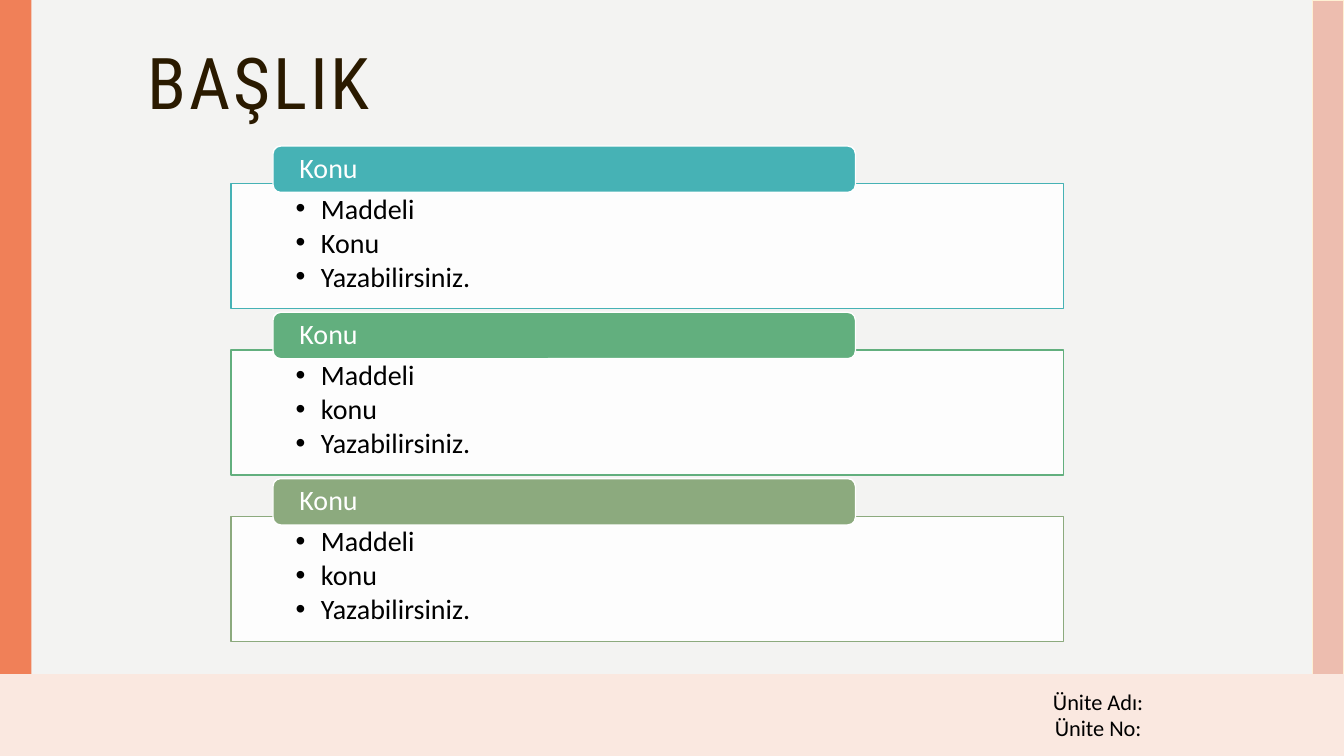
"""Build a title slide with three topic panels and a unit footer."""
import pptx
import pptx.util
import pptx.dml.color
import pptx.enum.shapes
import pptx.enum.text
import pptx.oxml
import pptx.oxml.ns

Cm, Pt = pptx.util.Cm, pptx.util.Pt
SHAPE = pptx.enum.shapes.MSO_SHAPE
ANCHOR = pptx.enum.text.MSO_ANCHOR
ALIGN = pptx.enum.text.PP_ALIGN

COLORS = {
    "background": "F3F3F2", "left bar": "F08058", "right bar": "EDBDAF",
    "bar edge": "FEF0D3", "footer": "FAE8E0", "title": "2A1A00",
    "white": "FFFFFF", "black": "000000",
    "teal": "46B2B5", "green": "62AF7E", "olive": "8CAA7E",
}
TITLE = "BAŞLIK"
TOPICS = [
    ("Konu", "teal", ["Maddeli", "Konu", "Yazabilirsiniz."]),
    ("Konu", "green", ["Maddeli", "konu", "Yazabilirsiniz."]),
    ("Konu", "olive", ["Maddeli", "konu", "Yazabilirsiniz."]),
]
UNIT_LINES = ["Ünite Adı:", "Ünite No:"]

WIDTH, HEIGHT, BAR = 33.87, 19.05, 0.79
FOOTER_TOP = 16.99
BANDS = [
    ((0, 0, BAR, HEIGHT), "left bar", None),
    ((WIDTH - BAR, 0, BAR, HEIGHT), "right bar", "bar edge"),
    ((0, FOOTER_TOP, WIDTH, HEIGHT - FOOTER_TOP), "footer", None),
]
PANEL_LEFT, PANEL_TOP, PANEL_WIDTH, PANEL_HEIGHT = 5.82, 4.63, 20.98, 3.15
LABEL_LEFT, LABEL_WIDTH, LABEL_HEIGHT = 6.88, 14.68, 1.17
LABEL_RISE, PITCH = 0.95, 4.19

TITLE_STYLE = {"size": Pt(51), "name": "Roboto Condensed"}
BODY_STYLE = {"size": Pt(20), "name": "Calibri"}
UNIT_STYLE = {"size": Pt(16), "name": "Calibri"}


def rgb(name):
    return pptx.dml.color.RGBColor.from_string(COLORS[name])


def add_block(page, kind, place, fill, line=None):
    block = page.shapes.add_shape(kind, *map(Cm, place))
    block.shadow.inherit = False
    block.fill.solid()
    block.fill.fore_color.rgb = rgb(fill)
    if line:
        block.line.color.rgb = rgb(line)
        block.line.width = Pt(1)
    else:
        block.line.fill.background()
    return block


def add_child(parent, tag, **values):
    child = pptx.oxml.parse_xml(f"<a:{tag} {pptx.oxml.ns.nsdecls('a')}/>")
    for key, value in values.items():
        child.set(key, str(value))
    parent.append(child)


def write(box, lines, style, color, insets, anchor=ANCHOR.TOP,
          align=ALIGN.LEFT, spacing=None, after=None, bullet=False):
    frame = box.text_frame
    frame.word_wrap = True
    frame.vertical_anchor = anchor
    for side, inset in zip(("left", "top", "right", "bottom"), insets):
        setattr(frame, f"margin_{side}", Cm(inset))
    for index, line in enumerate(lines):
        para = frame.add_paragraph() if index else frame.paragraphs[0]
        span = para.add_run()
        span.text = line
        layout = {"alignment": align, "line_spacing": spacing, "space_after": after}
        for key, value in layout.items():
            setattr(para, key, value)
        if bullet:
            props = para._p.get_or_add_pPr()
            props.set("marL", str(Cm(0.64)))
            props.set("indent", str(-Cm(0.64)))
            add_child(props, "buFont", typeface="Arial")
            add_child(props, "buChar", char="•")
        for key, value in style.items():
            setattr(span.font, key, value)
        span.font.color.rgb = rgb(color)
    return frame


def add_topic(page, index, heading, color, items):
    top = PANEL_TOP + index * PITCH
    panel = add_block(page, SHAPE.RECTANGLE,
                      (PANEL_LEFT, top, PANEL_WIDTH, PANEL_HEIGHT), "white", color)
    tint = panel.fill._xPr.find(".//" + pptx.oxml.ns.qn("a:srgbClr"))
    add_child(tint, "alpha", val=90000)
    write(panel, items, BODY_STYLE, "black", (1.63, 0.28, 1.63, 0.41),
          spacing=0.9, after=Pt(2.7), bullet=True)
    label = add_block(page, SHAPE.ROUNDED_RECTANGLE,
                      (LABEL_LEFT, top - LABEL_RISE, LABEL_WIDTH, LABEL_HEIGHT),
                      color, "white")
    write(label, [heading], BODY_STYLE, "white", (0.61, 0, 0.61, 0),
          anchor=ANCHOR.MIDDLE, spacing=0.9)


def main():
    deck = pptx.Presentation()
    deck.slide_width, deck.slide_height = Cm(WIDTH), Cm(HEIGHT)
    page = deck.slides.add_slide(deck.slide_layouts[6])
    page.background.fill.solid()
    page.background.fill.fore_color.rgb = rgb("background")

    for place, fill, line in BANDS:
        add_block(page, SHAPE.RECTANGLE, place, fill, line)
    unit_box = page.shapes.add_textbox(Cm(25.12), Cm(17.2), Cm(5.11), Cm(1.63))
    write(unit_box, UNIT_LINES, UNIT_STYLE, "black", (0.25, 0.13, 0.25, 0.13),
          align=ALIGN.CENTER)

    for index, topic in enumerate(TOPICS):
        add_topic(page, index, *topic)

    title_box = page.shapes.add_textbox(Cm(3.48), Cm(1.07), Cm(28.27), Cm(2.44))
    frame = write(title_box, [TITLE], TITLE_STYLE, "title",
                  (0.25, 0.13, 0.25, 0.13), spacing=0.9)
    frame.paragraphs[0].runs[0].font._element.set("spc", "200")
    deck.save("out.pptx")


if __name__ == "__main__":
    main()
